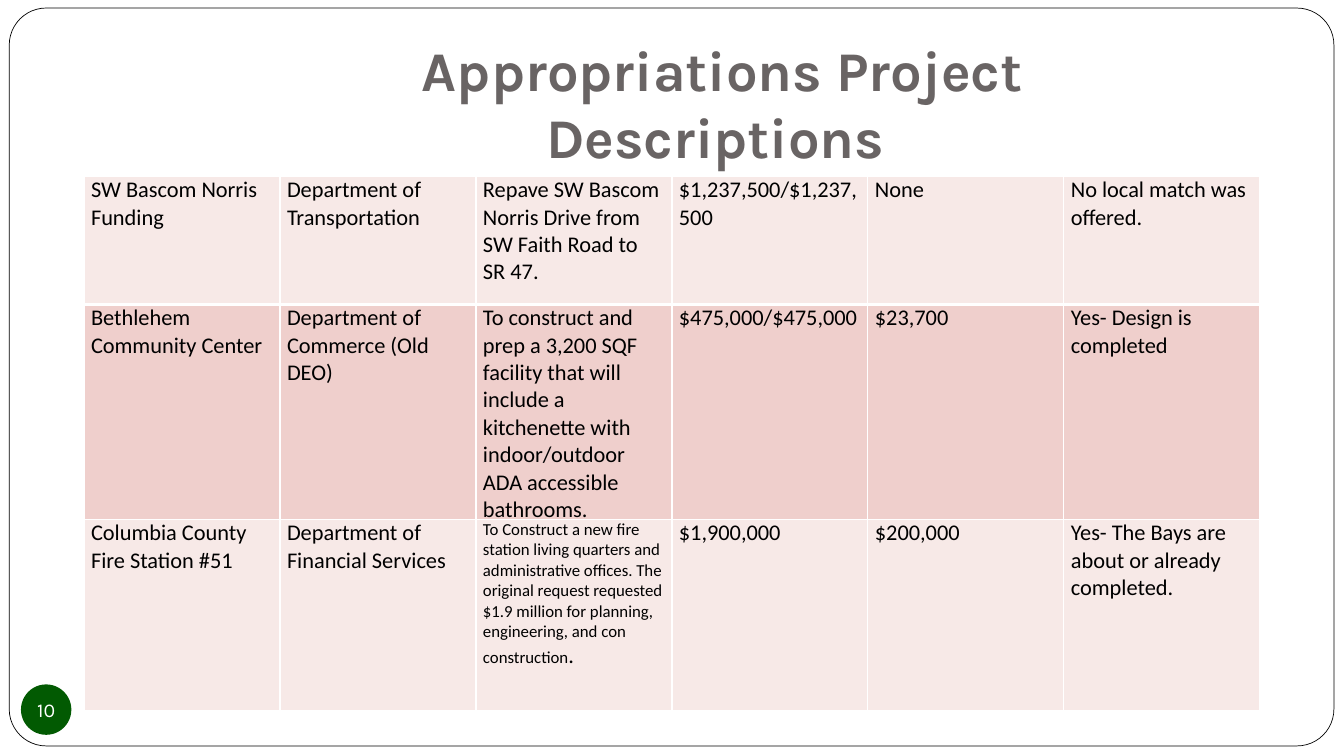
from dataclasses import dataclass

from lxml.etree import SubElement
from pptx import Presentation
from pptx.dml.color import RGBColor as RGB
from pptx.enum.shapes import MSO_SHAPE as SHAPE
from pptx.enum.text import MSO_ANCHOR as ANCHOR, PP_ALIGN as ALIGN
from pptx.oxml.ns import qn
from pptx.util import Inches, Pt


@dataclass(frozen=True)
class Theme:
    white: str = "FFFFFF"
    black: str = "000000"
    heading: str = "696464"
    green: str = "025A02"
    bands: tuple = ("F7E9E7", "EFCFCC")
    heading_font: str = "Karla"
    body_font: str = "Calibri"
    title_size: float = 40
    body_size: float = 16
    small_size: float = 12
    badge_size: float = 14
    hairline: float = 0.5
    rule: float = 1
    thick_rule: float = 3


def apply(target, **values):
    for name, value in values.items():
        setattr(target, name, value)


class Deck:
    COLS, ROWS = 16, 30

    def __init__(self, theme):
        self.theme = theme
        self.prs = Presentation()
        apply(self.prs, slide_width=Inches(13.333), slide_height=Inches(7.5))
        self.s = self.prs.slides.add_slide(self.prs.slide_layouts[6])

    def x(self, cols):
        return round(self.prs.slide_width * cols / self.COLS)

    def y(self, rows):
        return round(self.prs.slide_height * rows / self.ROWS)

    def place(self, col, row, width, height):
        return self.x(col), self.y(row), self.x(width), self.y(height)

    def add_text(self, tf, runs, color, font, align=None, bold=False, **frame):
        """Fill a text frame with (text, size) runs."""
        apply(tf, **frame)
        p = tf.paragraphs[0]
        p.alignment = align
        for text, size in runs:
            r = p.add_run()
            r.text = text
            apply(r.font, name=font, size=Pt(size), bold=bold)
            r.font.color.rgb = RGB.from_string(color)

    def shape(self, kind, box, fill, line=None):
        sp = self.s.shapes.add_shape(kind, *self.place(*box))
        sp.shadow.inherit = False
        sp.fill.solid()
        sp.fill.fore_color.rgb = RGB.from_string(fill)
        if line:
            sp.line.color.rgb = RGB.from_string(line)
            sp.line.width = Pt(self.theme.hairline)
        else:
            sp.line.fill.background()
        return sp

    def frame(self, box):
        sp = self.shape(SHAPE.ROUNDED_RECTANGLE, box, self.theme.white, self.theme.black)
        sp.adjustments[0] = 0.05

    def title(self, text, box):
        t = self.theme
        sp = self.s.shapes.add_textbox(*self.place(*box))
        self.add_text(sp.text_frame, [(text, t.title_size)], t.heading, t.heading_font,
                      ALIGN.CENTER, True, word_wrap=True, vertical_anchor=ANCHOR.TOP,
                      margin_bottom=Inches(0.1))

    def badge(self, text, box):
        t = self.theme
        sp = self.shape(SHAPE.OVAL, box, t.green)
        self.add_text(sp.text_frame, [(text, t.badge_size)], t.white, t.heading_font,
                      ALIGN.CENTER, word_wrap=False, vertical_anchor=ANCHOR.MIDDLE,
                      margin_left=0, margin_right=0, margin_top=0, margin_bottom=0)

    def borders(self, cell, **widths):
        tc_pr = cell._tc.get_or_add_tcPr()
        for side, width in widths.items():
            ln = SubElement(tc_pr, qn(f"a:ln{side}"), w=str(Pt(width)))
            fill = SubElement(ln, qn("a:solidFill"))
            SubElement(fill, qn("a:srgbClr"), val=self.theme.white)

    def table(self, rows, heights, col, row, width):
        t = self.theme
        box = self.place(col, row, width, sum(heights))
        table = self.s.shapes.add_table(len(rows), len(rows[0]), *box).table
        apply(table, first_row=False, horz_banding=False)
        for column in table.columns:
            column.width = self.x(width / len(rows[0]))
        for i, (values, height) in enumerate(zip(rows, heights)):
            table.rows[i].height = self.y(height)
            # The first row is set off by a thicker rule
            top, bottom = (t.thick_rule if i == n else t.rule for n in (1, 0))
            for j, value in enumerate(values):
                cell = table.cell(i, j)
                apply(cell, margin_left=Inches(0.07), margin_right=Inches(0.07),
                      margin_top=0, margin_bottom=0)
                self.borders(cell, L=t.rule, R=t.rule, T=top, B=bottom)
                cell.fill.solid()
                cell.fill.fore_color.rgb = RGB.from_string(t.bands[i % 2])
                runs = [(value, t.body_size)] if isinstance(value, str) else value
                self.add_text(cell.text_frame, runs, t.black, t.body_font)


THEME = Theme()
PROJECTS = [
    ["SW Bascom Norris Funding", "Department of Transportation",
     "Repave SW Bascom Norris Drive from SW Faith Road to SR 47.",
     "$1,237,500/$1,237,500", "None", "No local match was offered."],
    ["Bethlehem Community Center", "Department of Commerce (Old DEO)",
     "To construct and prep a 3,200 SQF facility that will include a kitchenette "
     "with indoor/outdoor ADA accessible bathrooms.",
     "$475,000/$475,000", "$23,700", "Yes- Design is completed"],
    ["Columbia County Fire Station #51", "Department of Financial Services",
     [("To Construct a new fire station living quarters and administrative offices. "
       "The original request requested $1.9 million for planning, engineering, "
       "and con construction", THEME.small_size), (".", THEME.body_size)],
     "$1,900,000", "$200,000", "Yes- The Bays are about or already completed."],
]


def main():
    deck = Deck(THEME)
    # Border and heading
    deck.frame((0.11, 0.32, 15.77, 29.28))
    deck.title("Appropriations Project Descriptions ", (3.2, 1.2, 10.8, 5))
    # Project table
    deck.table(PROJECTS, (5.08, 8.16, 7.6), col=1, row=7, width=14)
    # Slide number
    deck.badge("10", (0.25, 27.16, 0.6, 2))
    deck.prs.save("out.pptx")


if __name__ == "__main__":
    main()
